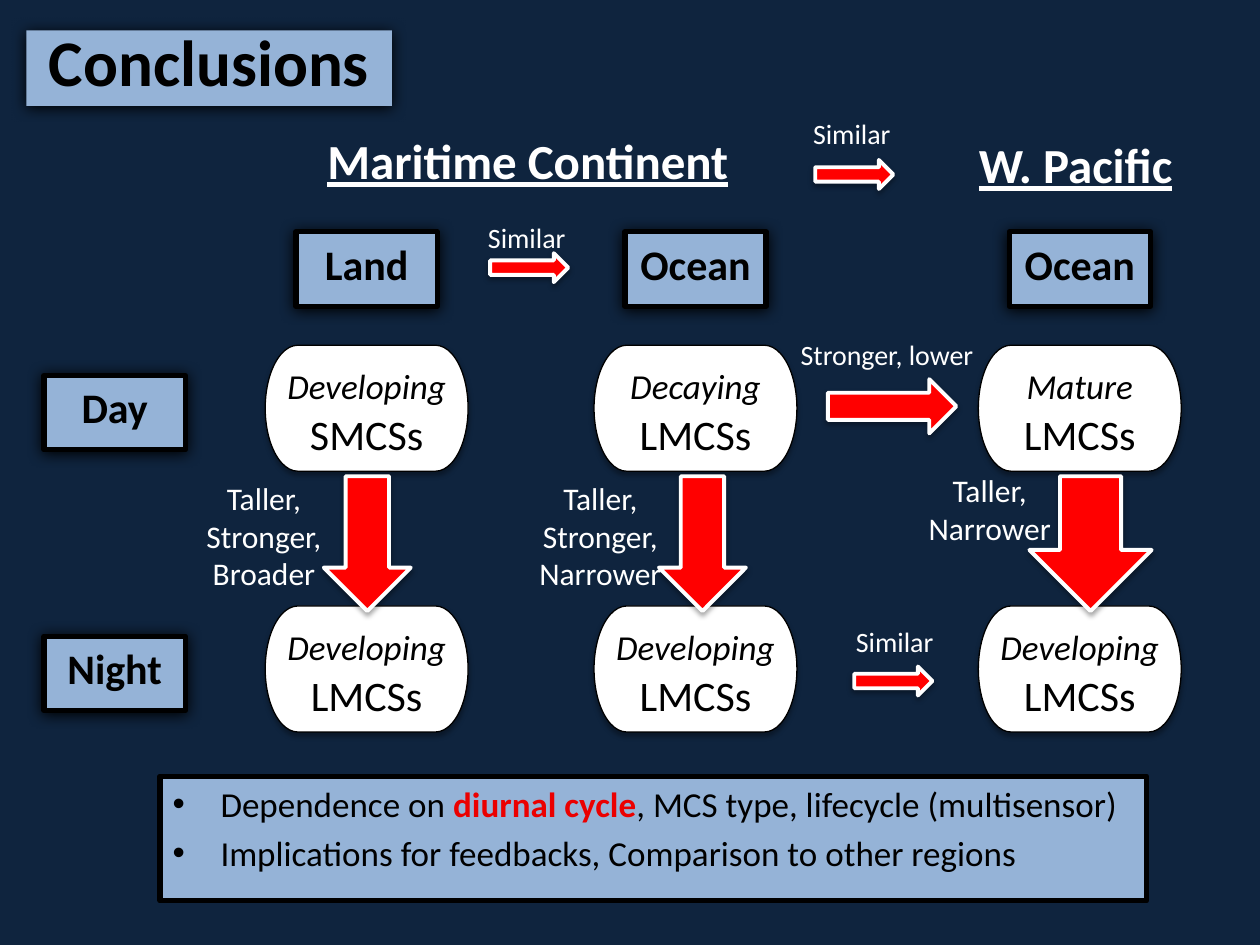
from lxml import etree
from pptx import Presentation
from pptx.dml.color import RGBColor
from pptx.enum.shapes import MSO_SHAPE
from pptx.enum.text import MSO_ANCHOR, MSO_AUTO_SIZE, PP_ALIGN
from pptx.oxml import parse_xml
from pptx.oxml.ns import nsdecls, qn
from pptx.util import Inches, Pt

NAVY = RGBColor(0x0F, 0x24, 0x3E)
BLUE = RGBColor(0x95, 0xB3, 0xD7)
RED = RGBColor(0xFF, 0x00, 0x00)
EMPHASIS_RED = RGBColor(0xEB, 0x00, 0x00)
BLACK = RGBColor(0x00, 0x00, 0x00)
WHITE = RGBColor(0xFF, 0xFF, 0xFF)
FONT = "Calibri"

# Shadows: opacity in percent, blur and distance in points
STRONG_SHADOW = (100, 8.5, 1)
SOFT_SHADOW = (35, 3.1, 1.8)

# Grid of the diagram: column centres and row tops, in inches
COLUMN_CENTRES = (2.91, 5.52, 8.57)
ROW_TOPS = (2.74, 4.81)
PILL_WIDTH, PILL_HEIGHT = 1.61, 1
LABEL_WIDTH, LABEL_HEIGHT = 1.12, 0.59
ROW_LABEL_LEFT, COLUMN_LABEL_TOP = 0.35, 1.84

TITLE = "Conclusions"
COLUMN_LABELS = ("Land", "Ocean", "Ocean")
ROW_LABELS = ("Day", "Night")
SYSTEMS = (
    (("Developing", "SMCSs"), ("Decaying", "LMCSs"), ("Mature", "LMCSs")),
    (("Developing", "LMCSs"), ("Developing", "LMCSs"), ("Developing", "LMCSs")),
)
# text, (left, top, width, height)
REGIONS = (
    ("Maritime Continent", (2.5, 0.99, 3.43, 0.57)),
    ("W. Pacific", (7.67, 1.02, 1.8, 0.57)),
)
# text, text box, arrow box
SIDEWAYS_CHANGES = (
    ("Similar", (3.77, 1.7, 0.82, 0.37), (3.89, 2.01, 0.62, 0.23)),
    ("Similar", (6.35, 0.88, 0.82, 0.37), (6.47, 1.27, 0.62, 0.23)),
    ("Stronger, lower", (6.23, 2.63, 1.62, 0.37), (6.57, 3.01, 1.02, 0.43)),
    ("Similar", (6.69, 4.91, 0.82, 0.37), (6.78, 5.29, 0.62, 0.23)),
)
# text, text box, arrow box before its quarter turn
DAY_TO_NIGHT_CHANGES = (
    ("Taller,\nStronger,\nBroader", (1.52, 3.75, 1.15, 1.01), (2.38, 3.97, 1.07, 0.69)),
    ("Taller,\nStronger,\nNarrower", (4.17, 3.75, 1.19, 1.01), (5.04, 3.97, 1.07, 0.69)),
    ("Taller,\nNarrower", (7.26, 3.69, 1.19, 0.71), (8.12, 3.83, 1.07, 0.97)),
)
# Each bullet is a list of (text, emphasised)
BULLETS = (
    (("Dependence on ", False), ("diurnal cycle", True),
     (", MCS type, lifecycle (multisensor)", False)),
    (("Implications for feedbacks, Comparison to other regions", False),),
)


def place(shape, box):
    shape.left, shape.top, shape.width, shape.height = map(Inches, box)


def paint(shape, fill, line=None, line_width=0):
    shape.fill.solid()
    shape.fill.fore_color.rgb = fill
    if line is None:
        shape.line.fill.background()
    else:
        shape.line.color.rgb = line
        shape.line.width = Pt(line_width)


def add_shadow(shape, opacity, blur, distance):
    """Give the shape a black shadow that falls straight down."""
    shape.shadow.inherit = False
    effects = shape._element.spPr.find(qn("a:effectLst"))
    effects.append(parse_xml(
        f'<a:outerShdw {nsdecls("a")} blurRad="{Pt(blur)}" dist="{Pt(distance)}" '
        'dir="5400000" rotWithShape="0"><a:srgbClr val="000000">'
        f'<a:alpha val="{opacity * 1000}"/></a:srgbClr></a:outerShdw>'))


def format_run(run, size, color, bold=False, italic=False, underline=False):
    font = run.font
    font.name, font.size, font.color.rgb = FONT, Pt(size), color
    font.bold, font.italic, font.underline = bold, italic, underline


def add_shape(slide, kind, box, fill, line, line_width, shadow):
    shape = slide.shapes.add_shape(kind, *map(Inches, box))
    paint(shape, fill, line, line_width)
    add_shadow(shape, *shadow)
    return shape


def add_label(slide, text, left, top):
    label = add_shape(slide, MSO_SHAPE.RECTANGLE, (left, top, LABEL_WIDTH, LABEL_HEIGHT),
                      BLUE, BLACK, 3, STRONG_SHADOW)
    label.text_frame.text = text
    label.text_frame.vertical_anchor = MSO_ANCHOR.TOP
    paragraph = label.text_frame.paragraphs[0]
    paragraph.alignment = PP_ALIGN.CENTER
    format_run(paragraph.runs[0], 24, BLACK, bold=True)


def add_pill(slide, stage, system, left, top):
    pill = add_shape(slide, MSO_SHAPE.FLOWCHART_TERMINATOR, (left, top, PILL_WIDTH, PILL_HEIGHT),
                     WHITE, BLACK, 0.75, SOFT_SHADOW)
    pill.text_frame.vertical_anchor = MSO_ANCHOR.MIDDLE
    paragraph = pill.text_frame.paragraphs[0]
    paragraph.alignment = PP_ALIGN.CENTER
    for text, size, italic in ((stage, 20, True), (" " + system, 24, False)):
        run = paragraph.add_run()
        run.text = text
        format_run(run, size, BLACK, italic=italic)


def add_arrow(slide, box, rotation=0):
    arrow = add_shape(slide, MSO_SHAPE.RIGHT_ARROW, box, RED, WHITE, 2.25, SOFT_SHADOW)
    arrow.rotation = rotation


def add_text(slide, text, box, size, alignment=PP_ALIGN.CENTER, **style):
    frame = slide.shapes.add_textbox(*map(Inches, box)).text_frame
    frame.word_wrap = False
    frame.auto_size = MSO_AUTO_SIZE.SHAPE_TO_FIT_TEXT
    frame.text = text
    for paragraph in frame.paragraphs:
        paragraph.alignment = alignment
        format_run(paragraph.runs[0], size, WHITE, **style)


def fill_title(title):
    place(title, (0.21, 0.24, 2.9, 0.6))
    paint(title, BLUE)
    add_shadow(title, *STRONG_SHADOW)
    frame = title.text_frame
    frame.text = TITLE
    frame.auto_size = MSO_AUTO_SIZE.NONE
    frame.vertical_anchor = MSO_ANCHOR.TOP
    paragraph = frame.paragraphs[0]
    paragraph.alignment = PP_ALIGN.CENTER
    paragraph.line_spacing = 0.8
    format_run(paragraph.runs[0], 37.2, BLACK, bold=True)


def fill_body(body):
    place(body, (1.27, 6.16, 7.83, 0.99))
    paint(body, BLUE, BLACK, 3)
    frame = body.text_frame
    frame.auto_size = MSO_AUTO_SIZE.NONE
    for index, bullet in enumerate(BULLETS):
        paragraph = frame.add_paragraph() if index else frame.paragraphs[0]
        paragraph.space_before = Pt(4)
        for text, emphasised in bullet:
            run = paragraph.add_run()
            run.text = text
            format_run(run, 20, EMPHASIS_RED if emphasised else BLACK, bold=emphasised)
        properties = paragraph._p.get_or_add_pPr()
        properties.set("marL", str(Inches(0.38)))
        properties.set("indent", str(-Inches(0.38)))
        etree.SubElement(properties, qn("a:buChar")).set("char", "•")


def main():
    presentation = Presentation()
    presentation.slide_width, presentation.slide_height = Inches(10), Inches(7.5)
    slide = presentation.slides.add_slide(presentation.slide_layouts[1])
    slide.background.fill.solid()
    slide.background.fill.fore_color.rgb = NAVY

    fill_title(slide.shapes.title)
    fill_body(slide.placeholders[1])

    for text, top in zip(ROW_LABELS, ROW_TOPS):
        add_label(slide, text, ROW_LABEL_LEFT, top + 0.24)
    for text, centre in zip(COLUMN_LABELS, COLUMN_CENTRES):
        add_label(slide, text, centre - LABEL_WIDTH / 2, COLUMN_LABEL_TOP)
    for text, box in REGIONS:
        add_text(slide, text, box, 28, PP_ALIGN.LEFT, bold=True, underline=True)

    for row, top in zip(SYSTEMS, ROW_TOPS):
        for (stage, system), centre in zip(row, COLUMN_CENTRES):
            add_pill(slide, stage, system, centre - PILL_WIDTH / 2, top)

    for changes, size, rotation in ((DAY_TO_NIGHT_CHANGES, 18, 90), (SIDEWAYS_CHANGES, 16, 0)):
        for text, text_box, arrow_box in changes:
            add_arrow(slide, arrow_box, rotation)
            add_text(slide, text, text_box, size)

    presentation.save("out.pptx")


if __name__ == "__main__":
    main()
